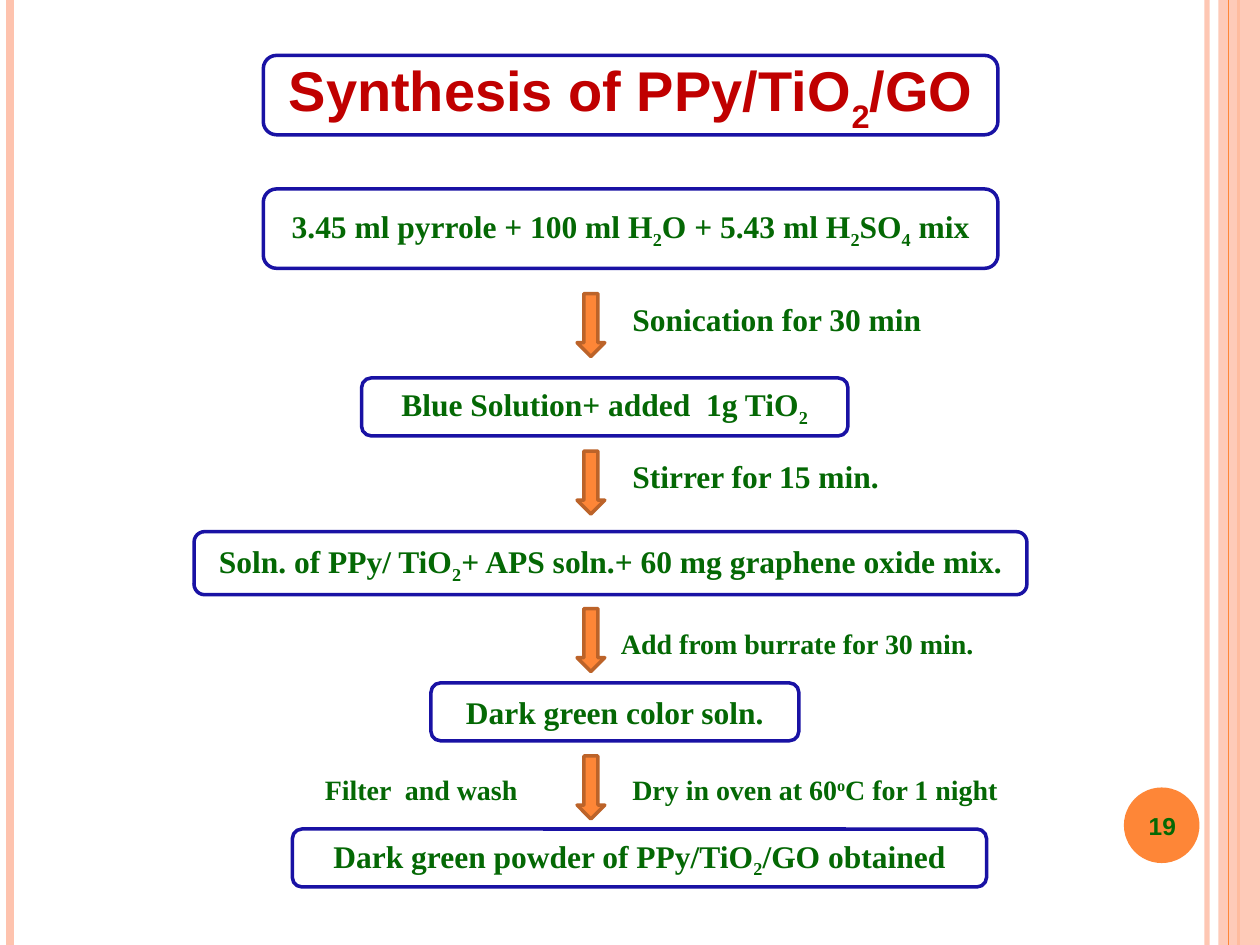
import pptx
import pptx.dml.color
import pptx.enum.shapes
import pptx.enum.text
import pptx.oxml.ns
import pptx.util
from lxml import etree
from pptx.util import Inches

SHAPE = pptx.enum.shapes.MSO_SHAPE
ALIGN = pptx.enum.text.PP_ALIGN
ANCHOR = pptx.enum.text.MSO_ANCHOR
qn = pptx.oxml.ns.qn

GREEN, RED, NAVY = "046804", "C00000", "1912A4"
ORANGE, RUST, PEACH = "FE8637", "BC6329", "FEC3AE"
SERIF, SANS = "Times New Roman", "Arial"

# Stripes: x, colour, width in points, opacity in percent
STRIPES = [(9.58, PEACH, 3, 93), (0.08, PEACH, 4.5, 100), (9.83, ORANGE, 1.5, 100)]
# Steps: left, top, width, height, text
STEPS = [
    (2.09, 1.5, 5.83, 0.63, "3.45 ml pyrrole + 100 ml H|2|O + 5.43 ml H|2|SO|4| mix"),
    (2.87, 3, 3.86, 0.46, "Blue Solution+ added  1g TiO|2|"),
    (1.54, 4.22, 6.61, 0.5, "Soln. of PPy/ TiO|2|+ APS soln.+ 60 mg graphene oxide mix."),
    (3.42, 5.42, 2.92, 0.46, "Dark green color soln."),
    (2.32, 6.58, 5.51, 0.46, "Dark green powder of PPy/TiO|2|/GO obtained"),
]
ARROW_TOPS = [2.33, 3.58, 4.83, 6]
# Conditions: left, top, width, height, size, text
CONDITIONS = [
    (4.92, 2.33, 2.68, 0.4, 18, "Sonication for 30 min"),
    (4.92, 3.58, 2.52, 0.4, 18, "Stirrer for 15 min."),
    (4.83, 4.92, 3.16, 0.37, 16, "Add from burrate for 30 min."),
    (4.92, 6.08, 3.31, 0.37, 16, "Dry in oven at 60|o|C for 1 night"),
    (2.48, 6.08, 1.94, 0.37, 16, "Filter  and wash"),
]


def rgb(color):
    return pptx.dml.color.RGBColor.from_string(color)


def set_alpha(fill, percent):
    """Give the colour of a solid fill element an opacity."""
    clr = fill.find(".//" + qn("a:srgbClr"))
    etree.SubElement(clr, qn("a:alpha")).set("val", str(percent * 1000))


def write(s, text, size, color=GREEN, font=SERIF, align=ALIGN.CENTER, baseline=-25):
    """Write one paragraph; every second part between bars is raised or lowered."""
    tf = s.text_frame
    tf.word_wrap = True
    p = tf.paragraphs[0]
    p.alignment = align
    for i, part in enumerate(text.split("|")):
        if not part:
            continue
        r = p.add_run()
        r.text = part
        r.font.size = pptx.util.Pt(size)
        r.font.name = font
        r.font.bold = True
        r.font.color.rgb = rgb(color)
        if i % 2:
            r.font._element.set("baseline", str(baseline * 1000))


def add_shape(slide, kind, left, top, width, height, fill=None, line=None):
    s = slide.shapes.add_shape(
        kind, Inches(left), Inches(top), Inches(width), Inches(height))
    s.shadow.inherit = False
    if fill:
        s.fill.solid()
        s.fill.fore_color.rgb = rgb(fill)
    else:
        s.fill.background()
    if line:
        s.line.color.rgb = rgb(line)
        s.line.width = pptx.util.Pt(2)
    else:
        s.line.fill.background()
    return s


def add_box(slide, left, top, width, height, text, size=18, **style):
    s = add_shape(slide, SHAPE.ROUNDED_RECTANGLE, left, top, width, height, line=NAVY)
    s.text_frame.vertical_anchor = ANCHOR.MIDDLE
    write(s, text, size, **style)


def add_text(slide, left, top, width, height, size, text, **style):
    s = slide.shapes.add_textbox(
        Inches(left), Inches(top), Inches(width), Inches(height))
    write(s, text, size, **style)
    return s


def add_stripe(slide, x, color, width, alpha=100):
    s = slide.shapes.add_connector(
        pptx.enum.shapes.MSO_CONNECTOR.STRAIGHT,
        Inches(x), 0, Inches(x), Inches(7.5))
    s.line.color.rgb = rgb(color)
    s.line.width = pptx.util.Pt(width)
    if alpha < 100:
        set_alpha(s.line._ln, alpha)
    etree.SubElement(s._element.spPr, qn("a:effectLst"))


def add_frame(slide):
    """Draw the decorative stripes and the disc for the page number."""
    for stripe in STRIPES:
        add_stripe(slide, *stripe)
    band = add_shape(slide, SHAPE.RECTANGLE, 9.67, 0, 0.33, 7.5, fill=PEACH)
    set_alpha(band._element.spPr, 87)
    add_stripe(slide, 9.75, ORANGE, 0.75)
    add_shape(slide, SHAPE.OVAL, 8.92, 6.25, 0.6, 0.6, fill=ORANGE)


def main():
    prs = pptx.Presentation()
    prs.slide_width, prs.slide_height = Inches(10), Inches(7.5)
    slide = prs.slides.add_slide(prs.slide_layouts[6])
    add_frame(slide)
    add_box(slide, 2.09, 0.44, 5.83, 0.63, "Synthesis of PPy/TiO|2|/GO",
            size=32, color=RED, font=SANS, baseline=-30)
    for step in STEPS:
        add_box(slide, *step)
    for top in ARROW_TOPS:
        add_shape(slide, SHAPE.DOWN_ARROW, 4.58, top, 0.22, 0.5, ORANGE, RUST)
    for condition in CONDITIONS:
        add_text(slide, *condition, align=ALIGN.LEFT, baseline=30)
    number = add_text(slide, 8.89, 6.27, 0.67, 0.57, 14, "19", font=SANS)
    number.text_frame.vertical_anchor = ANCHOR.MIDDLE
    prs.save("out.pptx")


if __name__ == "__main__":
    main()
